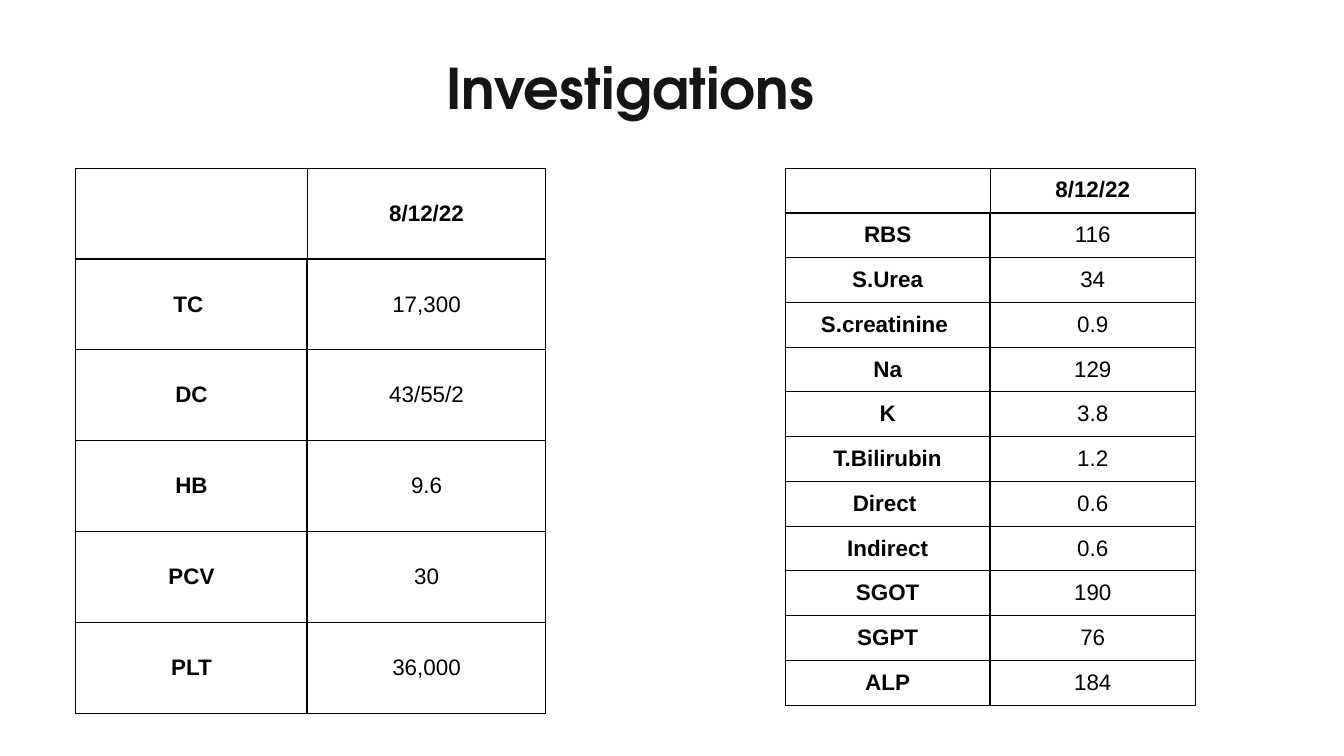
from dataclasses import dataclass

from lxml import etree
from pptx import Presentation
from pptx.dml.color import RGBColor
from pptx.enum import text
from pptx.oxml import ns
from pptx.util import Inches, Pt


@dataclass(frozen=True)
class Theme:
    background: str = "FFFFFF"
    title_color: str = "151515"
    ink: str = "000000"
    title_font: str = "TeX Gyre Adventor"
    body_font: str = "Arial"
    title_size: int = 80
    body_size: int = 32
    thin_line: int = 1
    thick_line: int = 3


THEME = Theme()
DATE = "8/12/22"
BLOOD_COUNT = [
    ("", DATE), ("TC ", "17,300"), ("DC", "43/55/2"), ("HB", "9.6"),
    ("PCV", "30"), ("PLT", "36,000"),
]
CHEMISTRY = [
    ("", DATE), ("RBS", "116"), ("S.Urea", "34"), ("S.creatinine ", "0.9"),
    ("Na", "129"), ("K", "3.8"), ("T.Bilirubin", "1.2"), ("Direct ", "0.6"),
    ("Indirect", "0.6"), ("SGOT", "190"), ("SGPT", "76"), ("ALP", "184"),
]


def format_text(frame, font_name, size, color, bold):
    for paragraph in frame.paragraphs:
        paragraph.alignment = text.PP_ALIGN.CENTER
        for run in paragraph.runs:
            run.font.name = font_name
            run.font.size = Pt(size)
            run.font.bold = bold
            run.font.color.rgb = RGBColor.from_string(color)


def set_borders(cell, right, bottom):
    """Draw all four sides, with the given right and bottom widths in points."""
    properties = cell._tc.get_or_add_tcPr()
    widths = {"L": THEME.thin_line, "R": right, "T": THEME.thin_line, "B": bottom}
    for side, width in widths.items():
        line = etree.SubElement(properties, ns.qn(f"a:ln{side}"), w=str(Pt(width)))
        fill = etree.SubElement(line, ns.qn("a:solidFill"))
        etree.SubElement(fill, ns.qn("a:srgbClr"), val=THEME.ink)


def add_title(slide, left, top, width, height):
    title = slide.shapes.title
    title.left, title.top = Inches(left), Inches(top)
    title.width, title.height = Inches(width), Inches(height)
    title.fill.solid()
    title.fill.fore_color.rgb = RGBColor.from_string(THEME.background)
    frame = title.text_frame
    frame.text = "Investigations"
    frame.word_wrap = True
    frame.auto_size = text.MSO_AUTO_SIZE.NONE
    frame.vertical_anchor = text.MSO_ANCHOR.MIDDLE
    frame.margin_left = frame.margin_right = Inches(0.06)
    frame.margin_top = frame.margin_bottom = Inches(0.06)
    format_text(frame, THEME.title_font, THEME.title_size, THEME.title_color, True)


def add_results_table(slide, rows, left, top, column_widths, height, side_margin):
    table = slide.shapes.add_table(
        len(rows), len(column_widths), Inches(left), Inches(top),
        Inches(sum(column_widths)), Inches(height)).table
    table.first_row = table.horz_banding = False
    for column, width in zip(table.columns, column_widths):
        column.width = Inches(width)
    for row_index, values in enumerate(rows):
        is_header = row_index == 0
        for column_index, value in enumerate(values):
            is_label = column_index == 0
            cell = table.cell(row_index, column_index)
            cell.text = value
            cell.vertical_anchor = text.MSO_ANCHOR.MIDDLE
            cell.margin_left = cell.margin_right = Inches(side_margin)
            cell.margin_top = cell.margin_bottom = Inches(0.06)
            format_text(cell.text_frame, THEME.body_font, THEME.body_size,
                        THEME.ink, is_header or is_label)
            set_borders(
                cell,
                right=THEME.thick_line if is_label and not is_header else THEME.thin_line,
                bottom=THEME.thick_line if is_header else THEME.thin_line)
            cell.fill.background()


def main():
    presentation = Presentation()
    presentation.slide_width = Inches(26.67)
    presentation.slide_height = Inches(15)
    slide = presentation.slides.add_slide(presentation.slide_layouts.get_by_name("Title Only"))
    slide.background.fill.solid()
    slide.background.fill.fore_color.rgb = RGBColor.from_string(THEME.background)
    add_results_table(slide, CHEMISTRY, 15.58, 3.33, (4.07, 4.07), 10.66, 0.07)
    add_results_table(slide, BLOOD_COUNT, 1.5, 3.33, (4.6, 4.73), 10.83, 0.13)
    add_title(slide, 3.42, 1, 18.17, 1.46)
    presentation.save("out.pptx")


if __name__ == "__main__":
    main()
